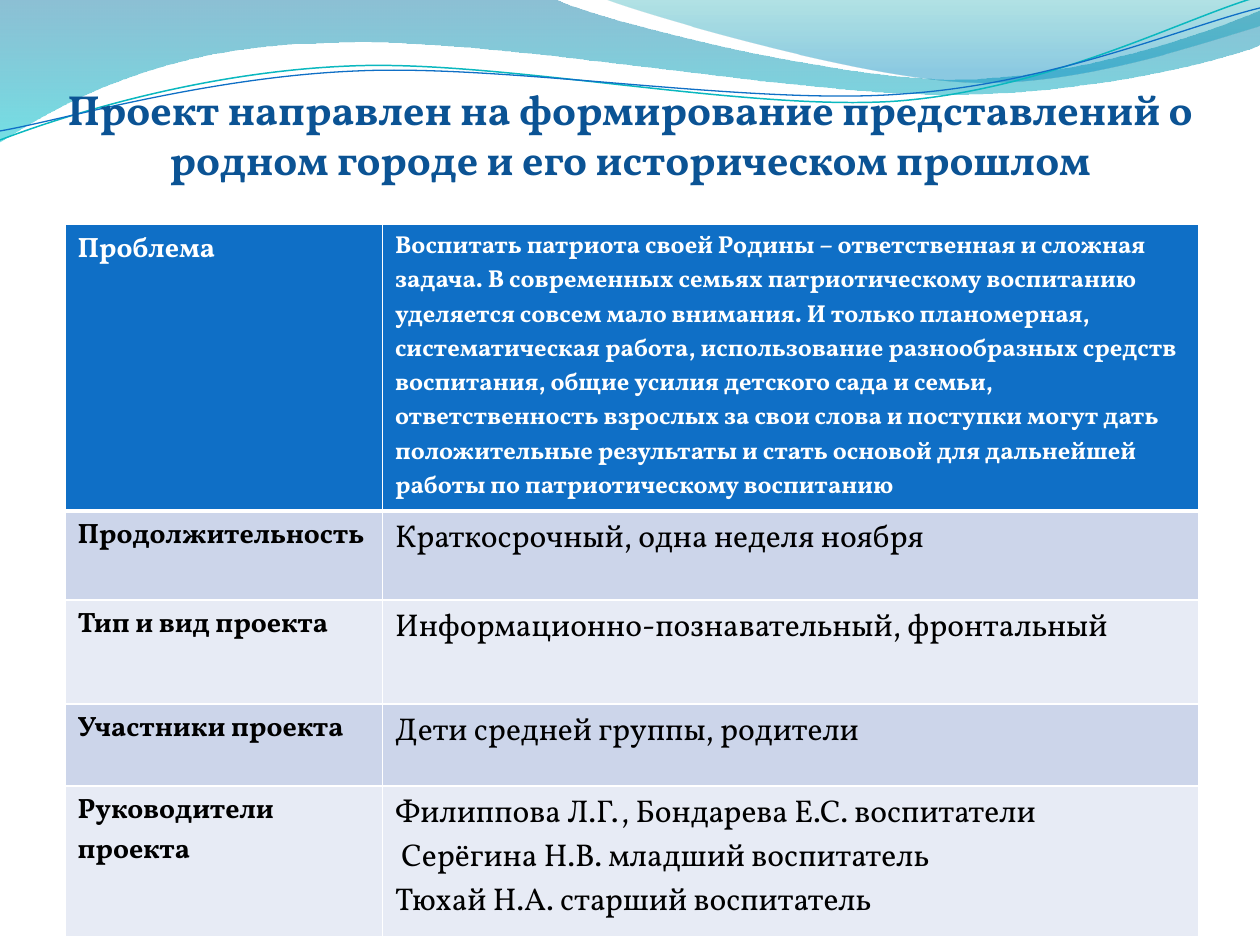
from lxml.etree import SubElement
from pptx import Presentation
from pptx.dml.color import RGBColor
from pptx.enum.text import MSO_ANCHOR, PP_ALIGN
from pptx.oxml.ns import qn
from pptx.util import Emu, Pt

SCALE = 914400 / 126
FONT = "Vollkorn"
COLORS = {
    "title": "0B5394", "header": "0F6FC6", "band": "CCD5EA", "pale": "E7EBF5",
    "white": "FFFFFF", "black": "000000", "teal": "0AB8BF",
    "deep_blue": "0074A1", "cyan": "00C6CF", "sea": "00A1A9", "azure": "008BBF",
}
TITLE = ("Проект направлен на формирование представлений о родном городе "
         "и его историческом прошлом")
PROBLEM = (
    "Воспитать патриота своей Родины – ответственная и сложная задача. "
    "В современных семьях патриотическому воспитанию уделяется совсем мало внимания. "
    "И только планомерная, систематическая работа, использование разнообразных средств "
    "воспитания, общие усилия детского сада и семьи, ответственность взрослых за свои "
    "слова и поступки могут дать положительные результаты и стать основой для "
    "дальнейшей работы по патриотическому воспитанию"
)
ROWS = [
    (287, "Проблема", [PROBLEM]),
    (89, "Продолжительность", ["Краткосрочный, одна неделя ноября"]),
    (104, "Тип и вид проекта", ["Информационно-познавательный, фронтальный"]),
    (82, "Участники проекта", ["Дети средней группы, родители"]),
    (151, "Руководители проекта", [
        "Филиппова Л.Г., Бондарева Е.С. воспитатели",
        " Серёгина Н.В. младший воспитатель",
        "Тюхай Н.А. старший воспитатель",
    ]),
]
COLUMN_SHARES = (0.28, 0.72)
LEFT_WAVE = [
    [(0, 0)], [(554, -1)],
    [(600, 21), (837, 79), (955, 79)], [(1075, 79), (1207, 33), (1260, 11)],
    [(1261, 45)],
    [(1239, 55), (1096, 96), (940, 94)], [(784, 94), (481, 35), (324, 43)],
    [(163, 45), (58, 105), (-1, 142)],
]
RIGHT_WAVE = [
    [(604, -1)], [(641, 14), (859, 78), (969, 82)],
    [(1079, 87), (1211, 40), (1260, 26)], [(1260, 0)],
]
TEAL_LINE = [
    [(0, 140)], [(60, 117), (199, 72), (349, 66)],
    [(498, 59), (747, 112), (898, 101)], [(1050, 89), (1182, 19), (1257, -3)],
]
BLUE_LINE = [
    [(0, 131)], [(59, 121), (207, 77), (357, 71)],
    [(508, 64), (752, 106), (903, 94)], [(1053, 84), (1186, 26), (1260, 8)],
]


def px(length):
    return Emu(round(length * SCALE))


def color(name):
    return RGBColor.from_string(COLORS[name])


def bend_segments(shape, segments):
    steps = iter(list(shape._element.iter(qn("a:lnTo"))))
    for segment in segments[1:]:
        first, *others = [next(steps) for _ in segment]
        if others:
            first.tag = qn("a:cubicBezTo")
            for step in others:
                first.append(step[0])
                step.getparent().remove(step)


def add_outline(page, origin, segments, close):
    corners = [(px(origin[0] + x), px(origin[1] + y))
               for segment in segments for x, y in segment]
    builder = page.shapes.build_freeform(*corners[0])
    builder.add_line_segments(corners[1:], close=close)
    shape = builder.convert_to_shape()
    bend_segments(shape, segments)
    shape.shadow.inherit = False
    return shape


def add_wave(page, origin, segments, stops):
    wave = add_outline(page, origin, segments, True)
    wave.line.fill.background()
    wave.fill.gradient()
    wave.fill.gradient_angle = 270
    elements = wave._element.spPr.iter(qn("a:gs"))
    for stop, element, (position, name, opacity) in zip(
            wave.fill.gradient_stops, elements, stops):
        stop.position = position
        stop.color.rgb = color(name)
        SubElement(element[0], qn("a:alpha"), val=str(opacity * 1000))


def add_swoosh(page, origin, segments, name, width):
    swoosh = add_outline(page, origin, segments, False)
    swoosh.fill.background()
    swoosh.line.color.rgb = color(name)
    swoosh.line.width = Pt(width)


def add_waves(page, left, top):
    origin = (left, top)
    add_wave(page, origin, LEFT_WAVE, [(0, "deep_blue", 45), (1, "cyan", 55)])
    add_wave(page, origin, RIGHT_WAVE, [(0, "sea", 30), (0.8, "azure", 45)])
    add_swoosh(page, origin, TEAL_LINE, "teal", 0.85)
    add_swoosh(page, origin, BLUE_LINE, "header", 0.75)


def add_span(para, text, size, name, bold):
    span = para.add_run()
    span.text = text
    span.font.name = FONT
    span.font.size = Pt(size)
    span.font.bold = bold
    span.font.color.rgb = color(name)


def add_title(page, left, top, width, height):
    box = page.shapes.add_textbox(px(left), px(top), px(width), px(height))
    frame = box.text_frame
    frame.word_wrap = True
    frame.vertical_anchor = MSO_ANCHOR.BOTTOM
    frame.margin_left = frame.margin_right = frame.margin_bottom = 0
    para = frame.paragraphs[0]
    para.alignment = PP_ALIGN.CENTER
    add_span(para, TITLE, 24, "title", True)


def add_borders(cell, top, bottom):
    properties = cell._tc.get_or_add_tcPr()
    for side, width in (("L", 1), ("R", 1), ("T", top), ("B", bottom)):
        line = SubElement(properties, qn(f"a:ln{side}"), w=str(Pt(width)))
        fill = SubElement(line, qn("a:solidFill"))
        SubElement(fill, qn("a:srgbClr"), val=COLORS["white"])


def fill_cell(cell, texts, row, size, bold):
    add_borders(cell, 3 if row == 1 else 1, 3 if row == 0 else 1)
    cell.fill.solid()
    cell.fill.fore_color.rgb = color(
        "header" if row == 0 else "band" if row % 2 else "pale")
    frame = cell.text_frame
    for index, text in enumerate(texts):
        para = frame.add_paragraph() if index else frame.paragraphs[0]
        add_span(para, text, size, "white" if row == 0 else "black", bold)


def add_project_table(page, left, top, width):
    height = sum(row[0] for row in ROWS)
    table = page.shapes.add_table(
        len(ROWS), len(COLUMN_SHARES), px(left), px(top), px(width), px(height)).table
    table.first_row = table.horz_banding = False
    for column, share in zip(table.columns, COLUMN_SHARES):
        column.width = px(width * share)
    for row, (row_height, label, texts) in enumerate(ROWS):
        table.rows[row].height = px(row_height)
        fill_cell(table.cell(row, 0), [label], row, 16, True)
        fill_cell(table.cell(row, 1), texts, row, 18 if row else 14, row == 0)


def main():
    deck = Presentation()
    deck.slide_width, deck.slide_height = px(1260), px(945)
    page = deck.slides.add_slide(deck.slide_layouts[6])
    add_waves(page, 0, 0)
    add_title(page, 63, 45, 1134, 139)
    add_project_table(page, 65, 224, 1134)
    deck.save("out.pptx")


if __name__ == "__main__":
    main()
